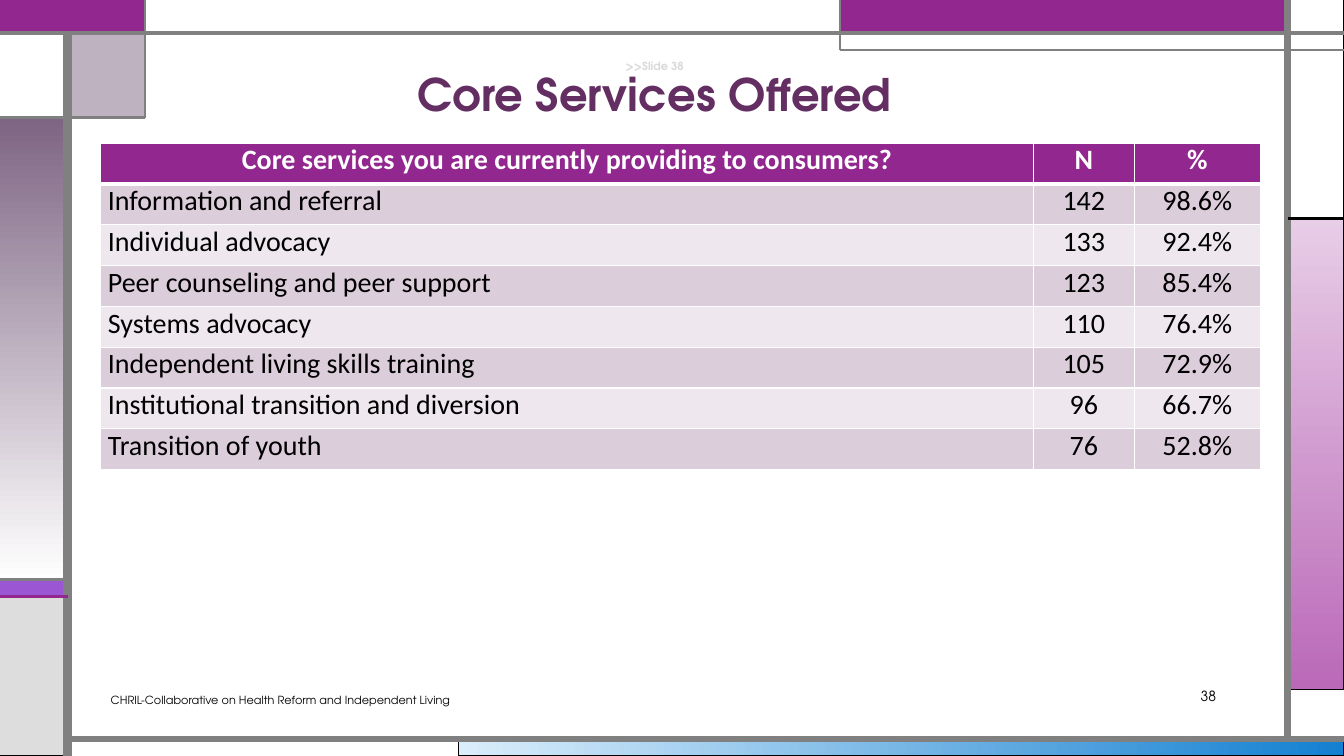
"""Build the slide on core services offered, with its frame, table and footer."""
from copy import deepcopy

from lxml.etree import SubElement
from pptx import Presentation
from pptx.dml.color import RGBColor
from pptx.enum.shapes import MSO_CONNECTOR, MSO_SHAPE
from pptx.enum.text import MSO_ANCHOR, PP_ALIGN
from pptx.oxml import parse_xml
from pptx.oxml.ns import nsdecls, qn
from pptx.util import Inches, Pt

WHITE = RGBColor(0xFF, 0xFF, 0xFF)
BLACK = RGBColor(0, 0, 0)
GREY = RGBColor(0x80, 0x80, 0x80)
PALE = RGBColor(0xDD, 0xDD, 0xDD)
FAINT = RGBColor(0xD9, 0xD9, 0xD9)
PURPLE = RGBColor(0x92, 0x27, 0x8F)
VIOLET = RGBColor(0x9B, 0x57, 0xD3)
INDIGO = RGBColor(0x75, 0x5D, 0xD9)
MAUVE = RGBColor(0x7E, 0x65, 0x83)
PLUM = RGBColor(0x63, 0x2E, 0x62)
PINK = RGBColor(0xE8, 0xCD, 0xE7)
ORCHID = RGBColor(0xBA, 0x69, 0xB8)
SKY = RGBColor(0xDA, 0xED, 0xFB)
BLUE = RGBColor(0x14, 0x80, 0xD1)
BANDS = (RGBColor(0xEE, 0xE8, 0xEE), RGBColor(0xDC, 0xCD, 0xDB))

HEAD = ("Core services you are currently providing to consumers?", "N", "%")
ROWS = [
    ("Information and referral", "142", "98.6%"),
    ("Individual advocacy", "133", "92.4%"),
    ("Peer counseling and peer support", "123", "85.4%"),
    ("Systems advocacy", "110", "76.4%"),
    ("Independent living skills training", "105", "72.9%"),
    ("Institutional transition and diversion", "96", "66.7%"),
    ("Transition of youth", "76", "52.8%"),
]
COLS = (9.25, 1, 1.25)
TALL = 3.24
TITLE = [(">>Slide 38", 8, FAINT), ("Core Services Offered", 32, PLUM)]
FOOT = "CHRIL-Collaborative on Health Reform and Independent Living"
FONT = "TeX Gyre Adventor"

WIDE, HIGH = 13.33, 7.5
LEFT, TAB, MID, RIGHT = 0.67, 1.44, 8.33, 12.77
TOP, LIP, STEP, SIDE = 0.33, 0.5, 1.17, 2.17
SILL, BASE, FLOOR = 5.75, 5.92, 7.33

# Each panel: left, top, right, bottom, fill, line colour, line width
PANELS = [
    (4.55, FLOOR, WIDE, HIGH, (SKY, BLUE, 0), BLACK, 0.75),
    (RIGHT, SIDE, WIDE, 6.84, (PINK, ORCHID, 270), BLACK, 0.75),
    (0, SILL, LEFT, BASE, VIOLET, BLACK, 0.75),
    (0, BASE, LEFT, HIGH, PALE, BLACK, 0.75),
    (RIGHT, 0, WIDE, SIDE, WHITE, BLACK, 0.75),
    (MID, 0, RIGHT, TOP, PURPLE, INDIGO, 0.75),
    (LEFT, TOP, TAB, STEP, MAUVE, BLACK, 0.75),
    (0, STEP, LEFT, SILL, (MAUVE, WHITE, 270), BLACK, 0.75),
    (0, TOP, LEFT, STEP, WHITE, BLACK, 0.75),
    (0, 0, TAB, TOP, PURPLE, PURPLE, 1.5),
    (TAB, 0, MID, TOP, WHITE, GREY, 0.75),
]
RULES = [
    (LEFT, HIGH, LEFT, TOP, GREY, 6),
    (LEFT, FLOOR, WIDE, FLOOR, GREY, 4.5),
    (RIGHT, FLOOR, RIGHT, 0, GREY, 4.5),
    (0, TOP, WIDE, TOP, GREY, 3),
    (WIDE, LIP, MID, LIP, GREY, 1.5),
    (MID, LIP, MID, 0, GREY, 1.5),
    (RIGHT, SIDE, WIDE, SIDE, BLACK, 2.25),
    (TAB, 0, TAB, STEP, GREY, 1.5),
    (TAB, STEP, 0, STEP, GREY, 2.25),
    (LEFT, SILL, 0, SILL, GREY, 2.25),
    (LEFT, BASE, 0, BASE, PURPLE, 2.25),
]


def add_panel(slide, left, top, right, low, fill, color, width):
    box = slide.shapes.add_shape(
        MSO_SHAPE.RECTANGLE, Inches(left), Inches(top),
        Inches(right - left), Inches(low - top))
    box.shadow.inherit = False
    box.line.color.rgb = color
    box.line.width = Pt(width)
    if isinstance(fill, RGBColor):
        box.fill.solid()
        box.fill.fore_color.rgb = fill
        if fill == MAUVE:
            tint = box.fill._xPr.find(".//" + qn("a:srgbClr"))
            SubElement(tint, qn("a:alpha"), val="50000")
    else:
        box.fill.gradient()
        box.fill.gradient_angle = fill[2]
        for stop, shade in zip(box.fill.gradient_stops, fill):
            stop.color.rgb = shade


def add_rule(slide, x1, y1, x2, y2, color, width):
    rule = slide.shapes.add_connector(
        MSO_CONNECTOR.STRAIGHT, Inches(x1), Inches(y1), Inches(x2), Inches(y2))
    rule.line.color.rgb = color
    rule.line.width = Pt(width)
    SubElement(rule._element.spPr, qn("a:effectLst"))


def add_run(para, text, size, color, bold=False, font=FONT):
    run = para.add_run()
    run.text = text
    run.font.name = font
    run.font.size = Pt(size)
    run.font.bold = bold
    run.font.color.rgb = color
    return run


def add_text(slide, left, top, width, height, align, anchor):
    frame = slide.shapes.add_textbox(
        Inches(left), Inches(top), Inches(width), Inches(height)).text_frame
    frame.word_wrap = True
    frame.vertical_anchor = anchor
    para = frame.paragraphs[0]
    para.alignment = align
    return para


def edge(cell, is_head, under):
    props = cell._tc.get_or_add_tcPr()
    widths = {"L": 1, "R": 1, "T": 3 if under else 1, "B": 3 if is_head else 1}
    for spot, (side, width) in enumerate(widths.items()):
        props.insert(spot, parse_xml(
            f'<a:ln{side} {nsdecls("a")} w="{Pt(width)}"><a:solidFill>'
            f'<a:srgbClr val="{WHITE}"/></a:solidFill></a:ln{side}>'))


def add_grid(slide):
    data = [HEAD] + ROWS
    grid = slide.shapes.add_table(
        len(data), len(COLS), Inches(1), Inches(1.42),
        Inches(sum(COLS)), Inches(TALL)).table
    for col, width in zip(grid.columns, COLS):
        col.width = Inches(width)
    for i, row in enumerate(data):
        for j, text in enumerate(row):
            cell = grid.cell(i, j)
            cell.margin_left = cell.margin_right = Inches(0.07)
            cell.margin_top = cell.margin_bottom = 0
            cell.fill.solid()
            cell.fill.fore_color.rgb = BANDS[i % 2] if i else PURPLE
            edge(cell, i == 0, i == 1)
            para = cell.text_frame.paragraphs[0]
            para.alignment = PP_ALIGN.LEFT if i and j == 0 else PP_ALIGN.CENTER
            add_run(para, text, 20, BLACK if i else WHITE, i == 0, "Calibri")


def add_title(slide):
    para = add_text(slide, 1.41, LIP, 10.17, 0.75,
                    PP_ALIGN.CENTER, MSO_ANCHOR.BOTTOM)
    para.line_spacing = 0.9
    small, large = TITLE
    run = add_run(para, *small, bold=True)
    para.add_line_break()
    para._p.find(qn("a:br")).append(deepcopy(run._r.rPr))
    add_run(para, *large, bold=True)


def main():
    deck = Presentation()
    deck.slide_width, deck.slide_height = Inches(WIDE), Inches(HIGH)
    slide = deck.slides.add_slide(deck.slide_layouts[6])
    for panel in PANELS:
        add_panel(slide, *panel)
    for rule in RULES:
        add_rule(slide, *rule)
    add_grid(slide)
    add_title(slide)
    page = add_text(slide, 11.08, 6.75, 1.08, 0.3,
                    PP_ALIGN.RIGHT, MSO_ANCHOR.MIDDLE)
    add_run(page, "38", 10, BLACK)
    foot = add_text(slide, 1, 6.75, 3.83, 0.38,
                    PP_ALIGN.LEFT, MSO_ANCHOR.MIDDLE)
    add_run(foot, FOOT, 8, BLACK)
    deck.save("out.pptx")


if __name__ == "__main__":
    main()
